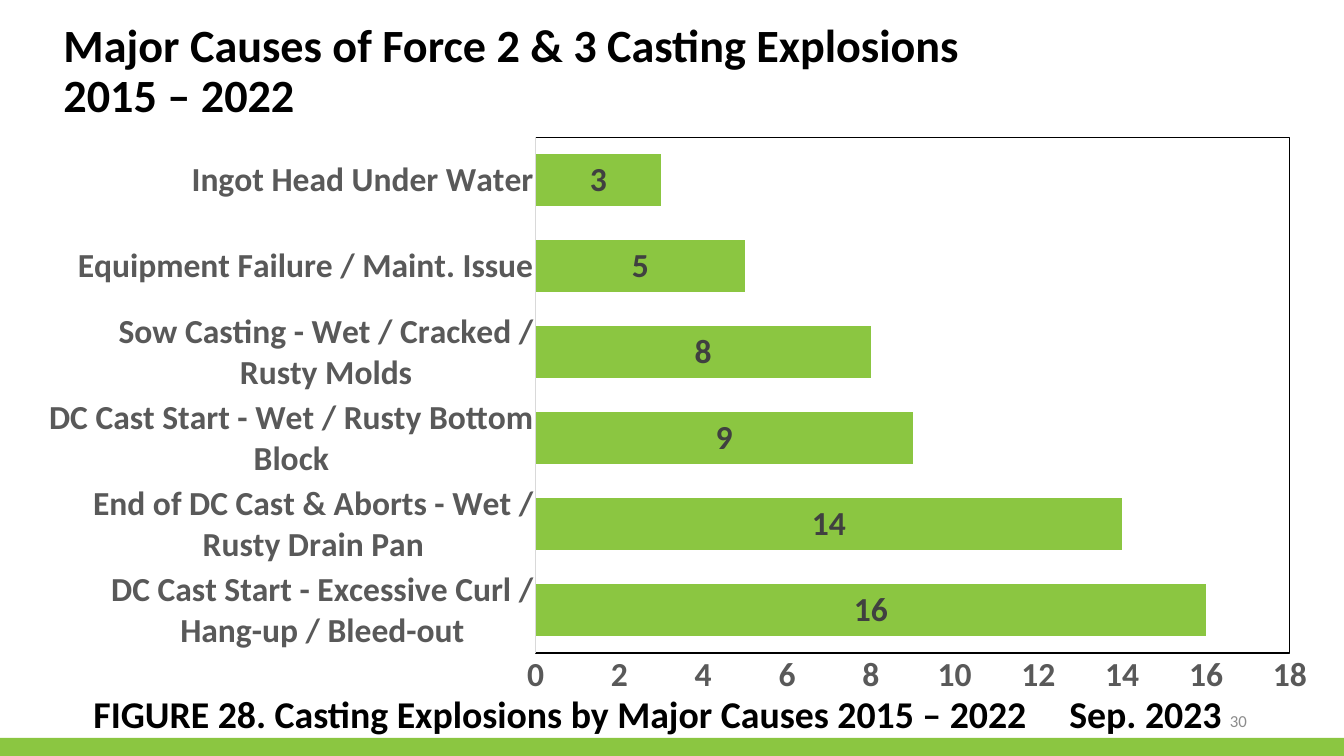
"""Build the slide on major causes of casting explosions."""
from dataclasses import dataclass

from lxml.etree import SubElement
from pptx import Presentation
from pptx.chart.data import CategoryChartData as ChartData
from pptx.dml.color import RGBColor as Color
from pptx.enum.chart import XL_CHART_TYPE as ChartType
from pptx.enum.chart import XL_LABEL_POSITION as LabelPosition
from pptx.enum.chart import XL_TICK_MARK as TickMark
from pptx.enum.shapes import MSO_SHAPE as Shape
from pptx.enum.text import MSO_ANCHOR as Anchor
from pptx.enum.text import MSO_AUTO_SIZE as AutoSize
from pptx.enum.text import PP_ALIGN as Align
from pptx.oxml import parse_xml
from pptx.oxml.ns import nsdecls, qn
from pptx.util import Pt

WIDTH, HEIGHT = 1920, 1080
CAUSES = {
    "DC Cast Start - Excessive Curl / Hang-up / Bleed-out": 16,
    "End of DC Cast & Aborts - Wet / Rusty Drain Pan": 14,
    "DC Cast Start - Wet / Rusty Bottom Block": 9,
    "Sow Casting - Wet / Cracked / Rusty Molds": 8,
    "Equipment Failure / Maint. Issue": 5,
    "Ingot Head Under Water": 3,
}


@dataclass(frozen=True)
class Theme:
    """Colours, font and type sizes of the deck."""

    font: str = "Calibri"
    green: str = "8BC641"
    black: str = "000000"
    white: str = "FFFFFF"
    axis_text: str = "595959"
    axis_line: str = "D9D9D9"
    label: str = "404040"
    muted: str = "8C8C8C"
    title_size: int = 66
    caption_size: int = 54
    chart_size: int = 48
    number_size: int = 24


def set_font(font, name, size, color, bold=True):
    """Apply typeface, size, colour and weight to a font."""
    font.name, font.size, font.bold = name, Pt(size), bold
    font.color.rgb = Color.from_string(color)


def write(frame, text, *, name, size, color, bold=True, align=Align.LEFT,
          anchor=Anchor.TOP, spacing=1.0, tab=None):
    """Fill a text frame with one paragraph per line of text."""
    frame.word_wrap = True
    frame.auto_size = AutoSize.NONE
    frame.vertical_anchor = anchor
    for index, line in enumerate(text.split("\n")):
        para = frame.add_paragraph() if index else frame.paragraphs[0]
        para.alignment, para.line_spacing = align, spacing
        para.space_before = Pt(0)
        if tab:
            stops = SubElement(para._p.get_or_add_pPr(), qn("a:tabLst"))
            SubElement(stops, qn("a:tab"), pos=str(Pt(tab)), algn="l")
        span = para.add_run()
        span.text = line
        set_font(span.font, name, size, color, bold)


class Page:
    """Hold the theme and the current slide, and draw on it."""

    def __init__(self, slide, theme):
        self.slide, self.theme = slide, theme

    def title(self, text, left, top, width, height):
        """Move and fill the title placeholder."""
        box = self.slide.shapes.title
        box.left, box.top, box.width, box.height = map(Pt, (left, top, width, height))
        write(box.text_frame, text, name=self.theme.font, size=self.theme.title_size,
              color=self.theme.black, spacing=0.9)

    def text(self, text, left, top, width, height, **style):
        """Add a text box."""
        box = self.slide.shapes.add_textbox(*map(Pt, (left, top, width, height)))
        write(box.text_frame, text, name=self.theme.font, **style)

    def band(self, left, top, width, height):
        """Add a plain green band."""
        band = self.slide.shapes.add_shape(
            Shape.RECTANGLE, *map(Pt, (left, top, width, height)))
        band.shadow.inherit = False
        band.fill.solid()
        band.fill.fore_color.rgb = Color.from_string(self.theme.green)
        band.line.fill.background()

    def bar_chart(self, values, left, top, width, height, plot):
        """Add a horizontal bar chart with its plot area at fixed fractions."""
        theme = self.theme
        data = ChartData()
        data.categories = list(values)
        data.add_series("Series 1", list(values.values()))
        chart = self.slide.shapes.add_chart(
            ChartType.BAR_CLUSTERED, *map(Pt, (left, top, width, height)), data).chart
        chart.has_legend = chart.has_title = False
        set_font(chart.font, theme.font, theme.chart_size, theme.black)
        for axis in (chart.category_axis, chart.value_axis):
            axis.has_major_gridlines = False
            axis.major_tick_mark = axis.minor_tick_mark = TickMark.NONE
            set_font(axis.tick_labels.font, theme.font, theme.chart_size, theme.axis_text)
        line = chart.category_axis.format.line
        line.color.rgb, line.width = Color.from_string(theme.axis_line), Pt(0.75)
        scale = chart.value_axis
        scale.format.line.fill.background()
        scale.minimum_scale, scale.maximum_scale, scale.major_unit = 0, 18, 2

        bars = chart.plots[0]
        bars.gap_width, bars.vary_by_categories = 65, False
        fill = bars.series[0].format.fill
        fill.solid()
        fill.fore_color.rgb = Color.from_string(theme.green)
        bars.has_data_labels = True
        labels = bars.data_labels
        labels.show_value, labels.position = True, LabelPosition.CENTER
        set_font(labels.font, theme.font, theme.chart_size, theme.label)
        self.frame_plot(chart, plot)

    def frame_plot(self, chart, plot):
        """Fix the inner plot area and give it a fill and outline."""
        area = chart._chartSpace.chart.plotArea
        for old in area.findall(qn("c:layout")):
            area.remove(old)
        layout = parse_xml(f"<c:layout {nsdecls('c')}/>")
        manual = SubElement(layout, qn("c:manualLayout"))
        settings = [("layoutTarget", "inner"), ("xMode", "edge"), ("yMode", "edge"),
                    *zip("xywh", plot)]
        for tag, value in settings:
            SubElement(manual, qn(f"c:{tag}"), val=str(value))
        area.insert(0, layout)
        area.append(parse_xml(
            f"<c:spPr {nsdecls('c', 'a')}>"
            f'<a:solidFill><a:srgbClr val="{self.theme.white}"/></a:solidFill>'
            f'<a:ln w="{Pt(1.5)}"><a:solidFill><a:srgbClr val="{self.theme.black}"/>'
            "</a:solidFill></a:ln></c:spPr>"))


def main():
    """Build and save the deck."""
    deck = Presentation()
    deck.slide_width, deck.slide_height = Pt(WIDTH), Pt(HEIGHT)
    theme = Theme()
    page = Page(deck.slides.add_slide(deck.slide_layouts[5]), theme)
    page.band(0, 1054, WIDTH, 26)
    page.text("30", 1356.5, 1001, 432, 57.5, size=theme.number_size, color=theme.muted,
              bold=False, align=Align.RIGHT, anchor=Anchor.MIDDLE)
    page.title("Major Causes of Force 2 & 3 Casting Explosions\n2015 – 2022",
               83.5, 29, 1353.5, 100)
    page.text("FIGURE 28. Casting Explosions by Major Causes 2015 – 2022\tSep. 2023",
              126.5, 990.5, 1640, 152, size=theme.caption_size, color=theme.black,
              spacing=0.9, tab=1394)
    page.bar_chart(CAUSES, 53.5, 184.5, 1813.5, 813.5, (0.393, 0.014, 0.595, 0.906))
    deck.save("out.pptx")


if __name__ == "__main__":
    main()
